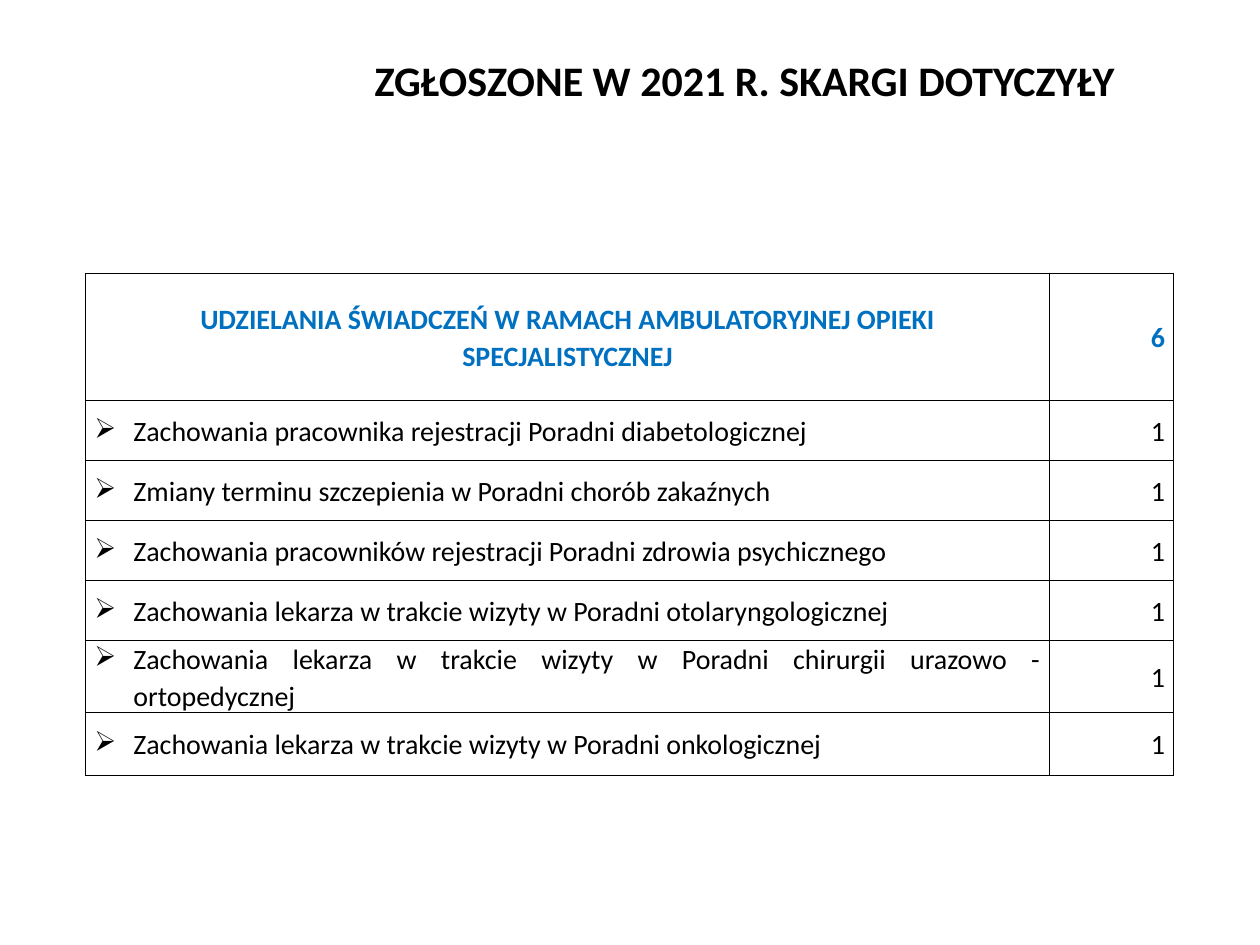
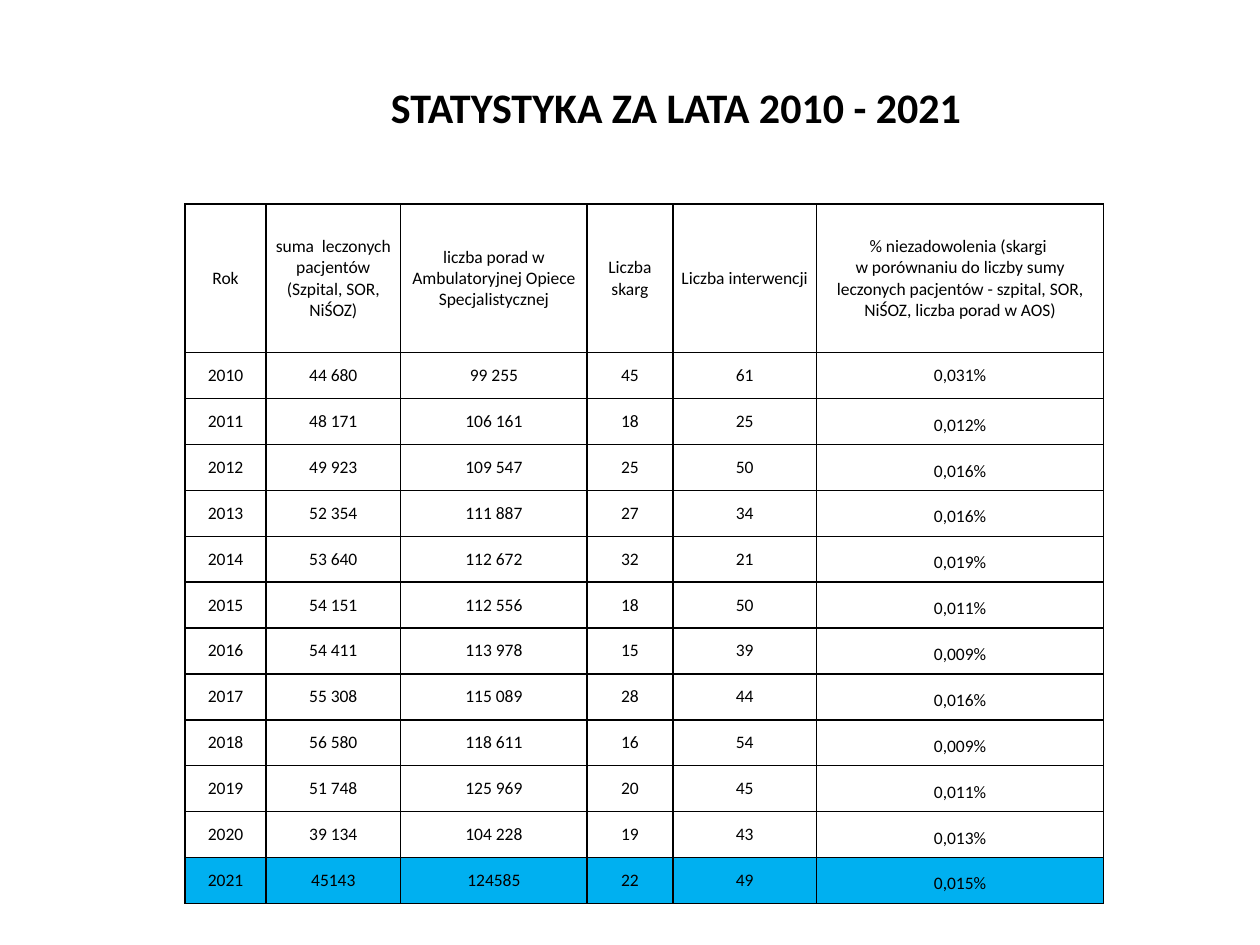
from dataclasses import dataclass

from lxml.etree import SubElement
from pptx import Presentation
from pptx.dml.color import RGBColor
from pptx.enum.text import MSO_ANCHOR, PP_ALIGN
from pptx.oxml.ns import qn
from pptx.slide import Slide
from pptx.table import Table, _Cell
from pptx.util import Inches, Pt

BLACK = RGBColor(0x00, 0x00, 0x00)
WHITE = RGBColor(0xFF, 0xFF, 0xFF)
HEADING_BLUE = RGBColor(0x00, 0x70, 0xC0)
CURRENT_YEAR_BLUE = RGBColor(0x00, 0xB0, 0xF0)

FONT = "Calibri"
SLIDE_W, SLIDE_H = Inches(10), Inches(7.5)
BULLET_INDENT = Inches(0.31)
CELL_INSET = Pt(5)


@dataclass
class Box:
    """Place and size in percent of the slide."""
    left: float
    top: float
    width: float
    height: float


@dataclass
class CellStyle:
    size: float
    align: PP_ALIGN = PP_ALIGN.CENTER
    anchor: MSO_ANCHOR = MSO_ANCHOR.MIDDLE
    color: RGBColor = BLACK
    fill: RGBColor = WHITE
    bold: bool = False
    bullet: bool = False
    spacing: float = 1.0
    inset_y: int = CELL_INSET


COMPLAINTS_HEADING = (
    "UDZIELANIA ŚWIADCZEŃ W RAMACH AMBULATORYJNEJ OPIEKI SPECJALISTYCZNEJ", "6")
COMPLAINTS = [
    "Zachowania pracownika rejestracji Poradni diabetologicznej",
    "Zmiany terminu szczepienia w Poradni chorób zakaźnych",
    "Zachowania pracowników rejestracji Poradni zdrowia psychicznego",
    "Zachowania lekarza w trakcie wizyty w Poradni otolaryngologicznej",
    "Zachowania lekarza w trakcie wizyty w Poradni chirurgii urazowo - ortopedycznej",
    "Zachowania lekarza w trakcie wizyty w Poradni onkologicznej",
]

STATISTICS = [
    ("Rok", "suma  leczonych pacjentów (Szpital, SOR, NiŚOZ)",
     "liczba porad w Ambulatoryjnej Opiece Specjalistycznej",
     "Liczba skarg", "Liczba interwencji",
     "% niezadowolenia (skargi \vw porównaniu do liczby sumy leczonych "
     "pacjentów - szpital, SOR, NiŚOZ, liczba porad w AOS)"),
    ("2010", "44 680", "99 255", "45", "61", "0,031%"),
    ("2011", "48 171", "106 161", "18", "25", "0,012%"),
    ("2012", "49 923", "109 547", "25", "50", "0,016%"),
    ("2013", "52 354", "111 887", "27", "34", "0,016%"),
    ("2014", "53 640", "112 672", "32", "21", "0,019%"),
    ("2015", "54 151", "112 556", "18", "50", "0,011%"),
    ("2016", "54 411", "113 978", "15", "39", "0,009%"),
    ("2017", "55 308", "115 089", "28", "44", "0,016%"),
    ("2018", "56 580", "118 611", "16", "54", "0,009%"),
    ("2019", "51 748", "125 969", "20", "45", "0,011%"),
    ("2020", "39 134", "104 228", "19", "43", "0,013%"),
    ("2021", "45143", "124585", "22", "49", "0,015%"),
]


def across(percent: float) -> int:
    return round(SLIDE_W * percent / 100)


def down(percent: float) -> int:
    return round(SLIDE_H * percent / 100)


def add_title(s: Slide, text: str, box: Box) -> None:
    tf = s.shapes.add_textbox(across(box.left), down(box.top),
                              across(box.width), down(box.height)).text_frame
    tf.word_wrap = True
    tf.vertical_anchor = MSO_ANCHOR.MIDDLE
    p = tf.paragraphs[0]
    p.text = text
    p.alignment = PP_ALIGN.CENTER
    p.line_spacing = 0.9
    p.font.name, p.font.size, p.font.bold = FONT, Pt(24), True
    p.font.color.rgb = BLACK


def add_grid(s: Slide, left: float, top: float,
             widths: list[float], heights: list[float]) -> Table:
    """Add a plain table; all lengths are percent of the slide."""
    table = s.shapes.add_table(len(heights), len(widths), across(left), down(top),
                               across(sum(widths)), down(sum(heights))).table
    table.first_row = table.horz_banding = False
    for column, width in zip(table.columns, widths):
        column.width = across(width)
    for row, height in zip(table.rows, heights):
        row.height = down(height)
    return table


def add_borders(cell: _Cell) -> None:
    tc_pr = cell._tc.get_or_add_tcPr()
    for side in ("L", "R", "T", "B"):
        ln = SubElement(tc_pr, qn(f"a:ln{side}"), w=str(Pt(1)))
        fill = SubElement(ln, qn("a:solidFill"))
        SubElement(fill, qn("a:srgbClr"), val=str(BLACK))


def fill_cell(cell: _Cell, text: str, style: CellStyle) -> None:
    add_borders(cell)
    cell.fill.solid()
    cell.fill.fore_color.rgb = style.fill
    cell.margin_left = cell.margin_right = CELL_INSET
    cell.margin_top = cell.margin_bottom = style.inset_y
    cell.vertical_anchor = style.anchor
    p = cell.text_frame.paragraphs[0]
    p.text = text
    p.alignment = style.align
    p.line_spacing = style.spacing
    if style.bullet:
        p_pr = p._p.get_or_add_pPr()
        p_pr.set("marL", str(BULLET_INDENT))
        p_pr.set("indent", str(-BULLET_INDENT))
        SubElement(p_pr, qn("a:buChar"), char="➢")
    p.font.name, p.font.size, p.font.bold = FONT, Pt(style.size), style.bold
    p.font.color.rgb = style.color


def complaints_slide(s: Slide) -> None:
    add_title(s, "ZGŁOSZONE W 2021 R. SKARGI DOTYCZYŁY\v", Box(25.1, 5.33, 68, 12.27))
    table = add_grid(s, 6.8, 28.93, [76.5, 9.85], [13.47] + [6.35] * 5 + [6.7])
    rows = [COMPLAINTS_HEADING] + [(complaint, "1") for complaint in COMPLAINTS]
    for i, (subject, count) in enumerate(rows):
        heading = i == 0
        shared = dict(size=16, spacing=1.07, inset_y=0, bold=heading,
                      color=HEADING_BLUE if heading else BLACK)
        subject_align = PP_ALIGN.CENTER if heading else PP_ALIGN.JUSTIFY
        fill_cell(table.cell(i, 0), subject,
                  CellStyle(align=subject_align, bullet=not heading, **shared))
        fill_cell(table.cell(i, 1), count, CellStyle(align=PP_ALIGN.RIGHT, **shared))


def statistics_slide(s: Slide) -> None:
    add_title(s, "STATYSTYKA ZA LATA 2010 - 2021", Box(14.7, 6.27, 77.9, 10.8))
    years = len(STATISTICS) - 1
    widths = [6.4, 10.7, 14.8, 6.8, 11.4, 22.8]
    table = add_grid(s, 14.7, 21.6, widths, [15.73] + [4.86] * years)
    for i, row in enumerate(STATISTICS):
        fill = CURRENT_YEAR_BLUE if i == years else WHITE
        for j, text in enumerate(row):
            # Percentages after 2010 sit at the bottom of their cells
            low = i > 1 and j == len(row) - 1
            anchor = MSO_ANCHOR.BOTTOM if low else MSO_ANCHOR.MIDDLE
            fill_cell(table.cell(i, j), text, CellStyle(10, anchor=anchor, fill=fill))


def main() -> None:
    prs = Presentation()
    prs.slide_width, prs.slide_height = SLIDE_W, SLIDE_H
    for build in (complaints_slide, statistics_slide):
        build(prs.slides.add_slide(prs.slide_layouts[6]))
    prs.save("out.pptx")


if __name__ == "__main__":
    main()
